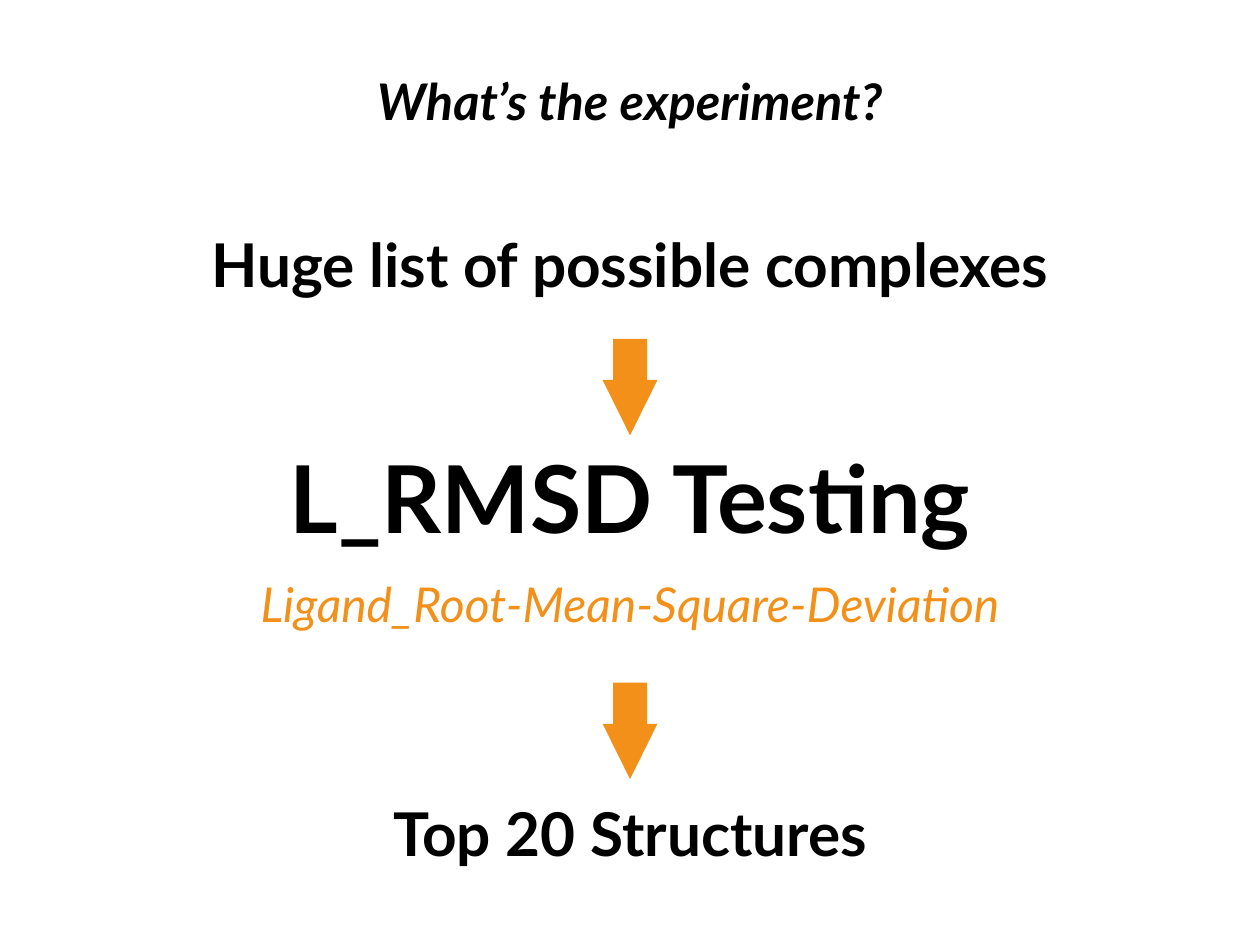
from pptx import Presentation
from pptx.dml.color import RGBColor
from pptx.enum import shapes, text
from pptx.util import Pt

WIDTH, HEIGHT = 1024, 768
BLACK, ORANGE = "000000", "F39019"
FONT = "Lato"

# wording, top, width, height, colour, font format
TITLE = ("What’s the experiment?", 0.7, 824, 105, BLACK,
         {"size": Pt(41), "bold": True, "italic": True})
STEPS = [
    ("Huge list of possible complexes", 184.3, 877, 78.5, BLACK,
     {"size": Pt(49), "bold": True}),
    ("L_RMSD Testing", 357.8, 877, 121, BLACK,
     {"size": Pt(76), "bold": True}),
    ("Ligand_Root-Mean-Square-Deviation", 467.3, 863, 78.5, ORANGE,
     {"size": Pt(39), "italic": True}),
    ("Top 20 Structures", 647.3, 877, 78.5, BLACK,
     {"size": Pt(49), "bold": True}),
]
ARROW_LENGTH, ARROW_BREADTH = 78.5, 44.6
ARROW_MIDDLES = [314.6, 594]


def rgb(value):
    return RGBColor.from_string(value)


def centred(width, top, height):
    """Return left, top, width and height of a box on the slide's middle line."""
    return [Pt(v) for v in ((WIDTH - width) / 2, top, width, height)]


def add_line(s, wording, top, width, height, colour, font):
    tf = s.shapes.add_textbox(*centred(width, top, height)).text_frame
    frame = {"word_wrap": True, "margin_left": 0, "margin_right": 0,
             "margin_top": 0, "margin_bottom": 0}
    for name, value in frame.items():
        setattr(tf, name, value)
    p = tf.paragraphs[0]
    p.alignment = text.PP_ALIGN.CENTER
    r = p.add_run()
    r.text = wording
    for name, value in {"name": FONT, **font}.items():
        setattr(r.font, name, value)
    r.font.color.rgb = rgb(colour)
    return tf


def add_down_arrow(s, middle):
    sp = s.shapes.add_shape(
        shapes.MSO_SHAPE.RIGHT_ARROW,
        *centred(ARROW_LENGTH, middle - ARROW_BREADTH / 2, ARROW_BREADTH))
    sp.rotation = 90
    sp.adjustments[0], sp.adjustments[1] = 0.62, 1.01
    sp.shadow.inherit = False
    sp.fill.solid()
    sp.fill.fore_color.rgb = rgb(ORANGE)
    sp.line.fill.background()


def main():
    prs = Presentation()
    prs.slide_width, prs.slide_height = Pt(WIDTH), Pt(HEIGHT)
    s = prs.slides.add_slide(prs.slide_layouts[6])

    tf = add_line(s, *TITLE)
    tf.vertical_anchor = text.MSO_ANCHOR.BOTTOM
    tf.paragraphs[0].line_spacing = 0.8
    for step in STEPS:
        add_line(s, *step)
    for middle in ARROW_MIDDLES:
        add_down_arrow(s, middle)

    prs.save("out.pptx")


if __name__ == "__main__":
    main()
